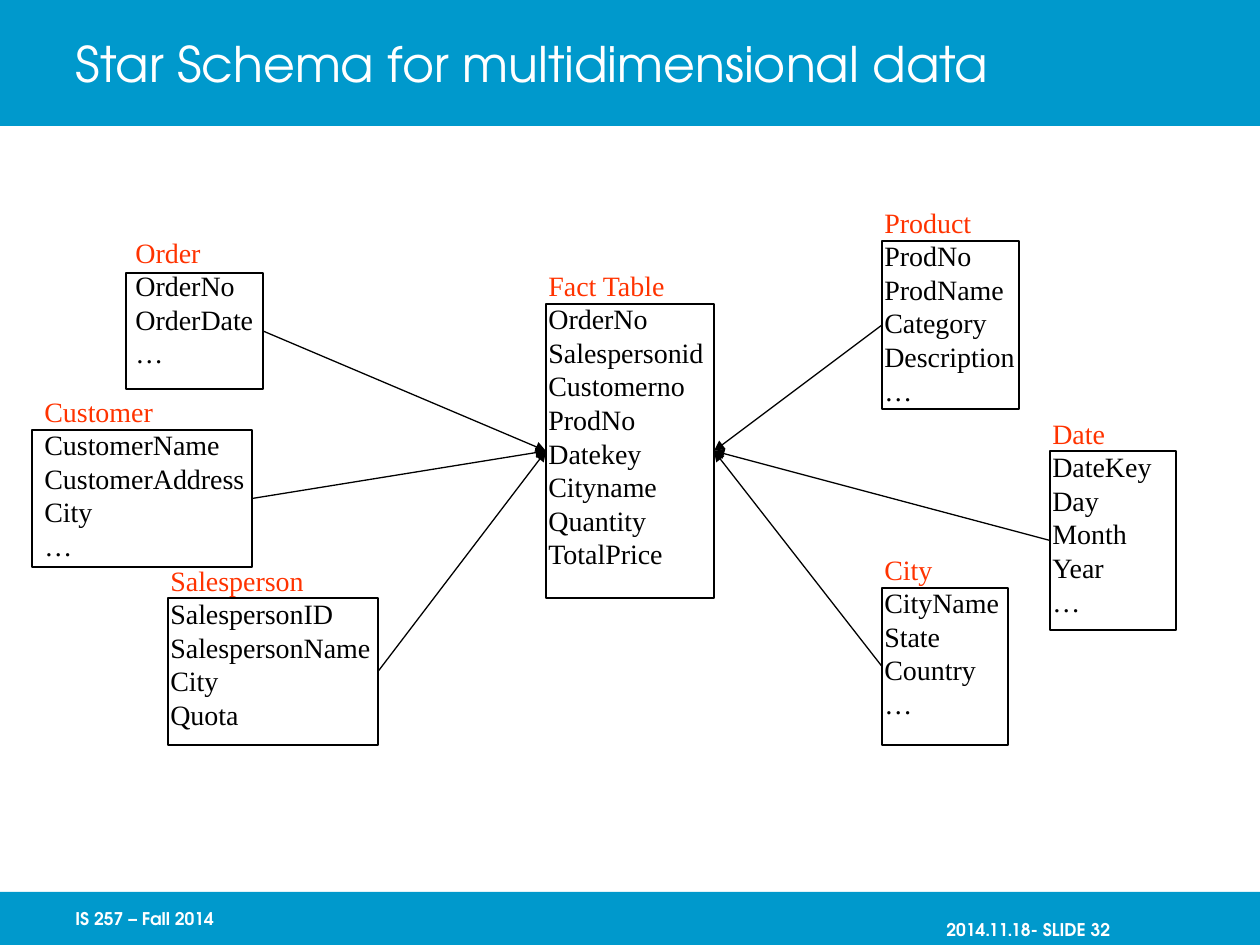
from dataclasses import dataclass

from lxml import etree
from pptx import Presentation
from pptx.dml.color import RGBColor
from pptx.enum.shapes import MSO_CONNECTOR, MSO_SHAPE
from pptx.enum.text import MSO_ANCHOR, PP_ALIGN
from pptx.oxml.ns import qn
from pptx.util import Emu, Pt

RECTANGLE = MSO_SHAPE.RECTANGLE
STRAIGHT = MSO_CONNECTOR.STRAIGHT
TOP, MIDDLE = MSO_ANCHOR.TOP, MSO_ANCHOR.MIDDLE
LEFT, RIGHT = PP_ALIGN.LEFT, PP_ALIGN.RIGHT
LEFT_SITE, RIGHT_SITE = 1, 3
PX_PER_INCH = 126
LINE_HEIGHT = 34


@dataclass(frozen=True)
class Theme:
    """Colours, fonts and type sizes of the slide."""
    band: RGBColor = RGBColor(0x00, 0x99, 0xCC)
    light: RGBColor = RGBColor(0xFF, 0xFF, 0xFF)
    ink: RGBColor = RGBColor(0x00, 0x00, 0x00)
    heading: RGBColor = RGBColor(0xFF, 0x33, 0x00)
    display_font: str = "TeX Gyre Adventor"
    body_font: str = "Times New Roman"
    title_size: Pt = Pt(28)
    body_size: Pt = Pt(16)
    footer_size: Pt = Pt(10)
    line_width: Pt = Pt(0.75)


@dataclass(frozen=True)
class Entity:
    """One table of the schema: its frame, the place of its text and its fields."""
    name: str
    frame: tuple
    text: tuple
    fields: tuple


THEME = Theme()
FACT = Entity("Fact Table", (546, 304, 168, 294), (536, 262, 181),
              ("OrderNo", "Salespersonid", "Customerno", "ProdNo", "Datekey",
               "Cityname", "Quantity", "TotalPrice"))
LEFT_DIMENSIONS = (
    Entity("Order", (126, 273, 137, 116), (123, 229, 144),
           ("OrderNo", "OrderDate", "…")),
    Entity("Customer", (32, 430, 220, 137), (32, 388, 226),
           ("CustomerName", "CustomerAddress", "City", "…")),
    Entity("Salesperson", (168, 598, 210, 147), (158, 557, 226),
           ("SalespersonID", "SalespersonName", "City", "Quota")),
)
RIGHT_DIMENSIONS = (
    Entity("Product", (882, 241, 137, 168), (872, 199, 156),
           ("ProdNo", "ProdName", "Category", "Description", "…")),
    Entity("Date", (1050, 451, 126, 179), (1040, 410, 125),
           ("DateKey", "Day", "Month", "Year", "…")),
    Entity("City", (882, 588, 126, 157), (872, 546, 140),
           ("CityName", "State", "Country", "…")),
)


def px(*lengths):
    """Turn pixel lengths into EMU."""
    return [Emu(round(length * 914400 / PX_PER_INCH)) for length in lengths]


def add_band(page, top, height):
    """Add a full-width coloured band."""
    band = page.shapes.add_shape(RECTANGLE, *px(0, top, 1260, height))
    band.shadow.inherit = False
    band.fill.solid()
    band.fill.fore_color.rgb = THEME.band
    band.line.fill.background()


def add_text_box(page, place, anchor=MIDDLE, wrap=True, right_inset=12):
    """Add an empty text box and return its text frame."""
    frame = page.shapes.add_textbox(*px(*place)).text_frame
    frame.word_wrap = wrap
    frame.vertical_anchor = anchor
    frame.margin_right = px(right_inset)[0]
    return frame


def add_span(para, text, font, size, color, bold=False):
    """Add one styled run to a paragraph."""
    span = para.add_run()
    span.text = text
    span.font.name = font
    span.font.size = size
    span.font.bold = bold
    span.font.color.rgb = color


def add_label(page, place, text, size, bold=False, align=LEFT):
    """Add a single light line of text on a band."""
    para = add_text_box(page, place, right_inset=0).paragraphs[0]
    para.alignment = align
    add_span(para, text, THEME.display_font, size, THEME.light, bold)


def add_entity(page, entity):
    """Add the heading, fields and frame of an entity and return the frame."""
    lines = (entity.name, *entity.fields)
    place = (*entity.text, LINE_HEIGHT * len(lines) + 12)
    text = add_text_box(page, place, TOP, wrap=False)
    for index, line in enumerate(lines):
        para = text.add_paragraph() if index else text.paragraphs[0]
        color = THEME.ink if index else THEME.heading
        add_span(para, line, THEME.body_font, THEME.body_size, color)
    frame = page.shapes.add_shape(RECTANGLE, *px(*entity.frame))
    frame.shadow.inherit = False
    frame.fill.background()
    frame.line.color.rgb = THEME.ink
    frame.line.width = THEME.line_width
    return frame


def add_arrow(page, source, source_site, target, target_site):
    """Join two frames with an arrow that points at the target."""
    arrow = page.shapes.add_connector(STRAIGHT, 0, 0, 0, 0)
    arrow.begin_connect(source, source_site)
    arrow.end_connect(target, target_site)
    arrow.line.color.rgb = THEME.ink
    arrow.line.width = THEME.line_width
    etree.SubElement(arrow.line._get_or_add_ln(), qn("a:tailEnd"), type="triangle")
    etree.SubElement(arrow._element.spPr, qn("a:effectLst"))


def main():
    """Build and save the star schema slide."""
    deck = Presentation()
    deck.slide_width, deck.slide_height = px(1260, 945)
    page = deck.slides.add_slide(deck.slide_layouts[6])
    add_band(page, 0, 126)
    add_band(page, 892, 53)
    add_label(page, (63, 0, 1071, 126), "Star Schema for multidimensional data",
              THEME.title_size)
    add_label(page, (63, 892, 262, 53), "IS 257 – Fall 2014", THEME.footer_size, True)
    add_label(page, (848, 903, 262, 53), "2014.11.18- SLIDE 32",
              THEME.footer_size, True, RIGHT)

    fact = add_entity(page, FACT)
    for dimensions, outer_site, fact_site in (
            (LEFT_DIMENSIONS, RIGHT_SITE, LEFT_SITE),
            (RIGHT_DIMENSIONS, LEFT_SITE, RIGHT_SITE)):
        for entity in dimensions:
            add_arrow(page, add_entity(page, entity), outer_site, fact, fact_site)
    deck.save("out.pptx")


if __name__ == "__main__":
    main()
